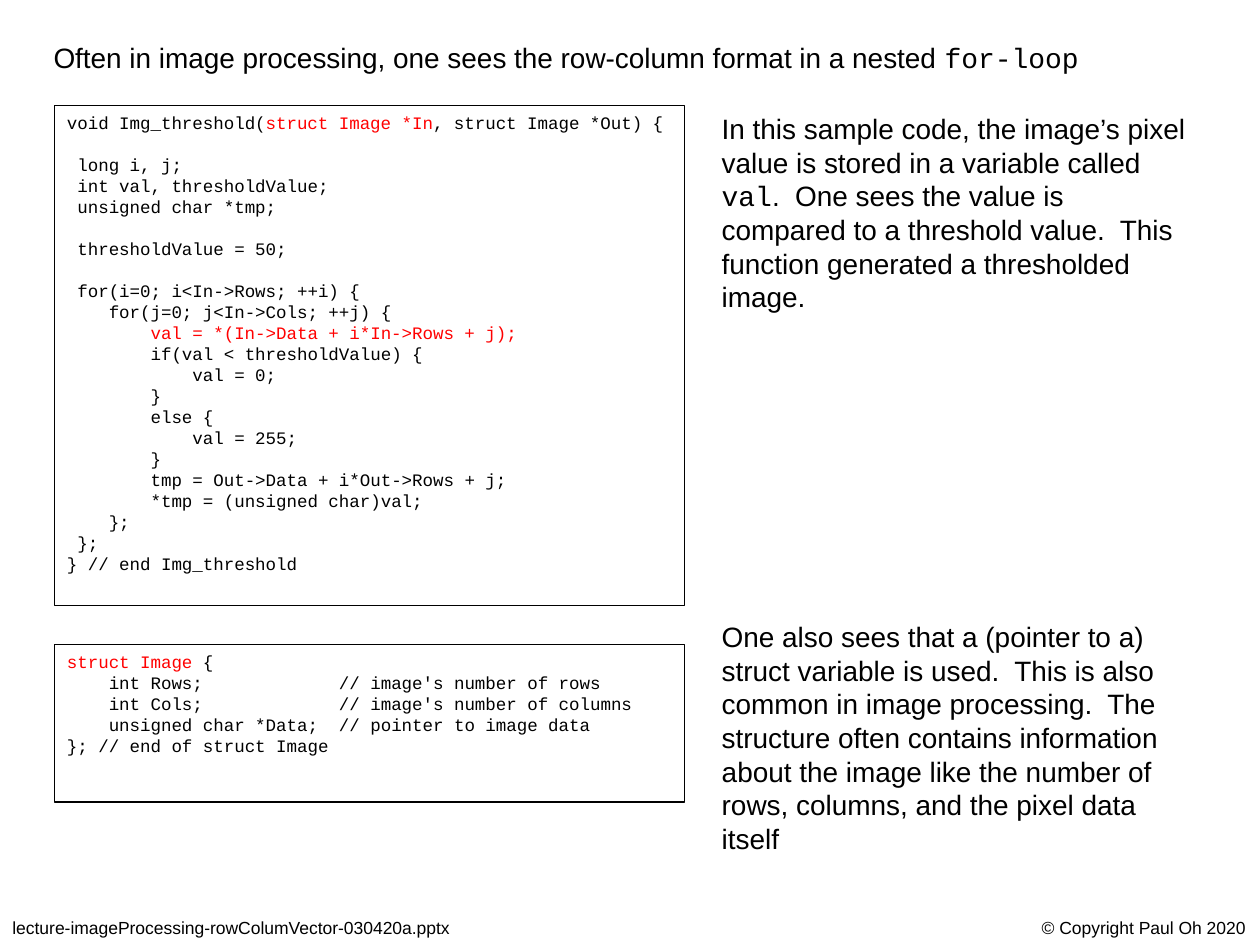
"""Build a slide on row-column image code in a nested for-loop."""
from pptx import Presentation
from pptx.dml.color import RGBColor
from pptx.enum.shapes import MSO_SHAPE
from pptx.enum.text import MSO_ANCHOR, MSO_AUTO_SIZE, PP_ALIGN
from pptx.util import Cm, Pt

HUES = {"ink": "000000", "mark": "FF0000"}
FRAME = {"auto_size": MSO_AUTO_SIZE.SHAPE_TO_FIT_TEXT, "vertical_anchor": MSO_ANCHOR.TOP}
SANS, MONO = "Arial", "Courier New"
LEFT, TOP, WIDE = 1.1, 2.13, 12.7
SIDE, SPAN = 14.3, 10.01
FOOT = 18.36

LOOP = """void Img_threshold(|struct Image *In|, struct Image *Out) {

 long i, j;
 int val, thresholdValue;
 unsigned char *tmp;

 thresholdValue = 50;

 for(i=0; i<In->Rows; ++i) {
    for(j=0; j<In->Cols; ++j) {
        |val = *(In->Data + i*In->Rows + j);|
        if(val < thresholdValue) {
            val = 0;
        }
        else {
            val = 255;
        }
        tmp = Out->Data + i*Out->Rows + j;
        *tmp = (unsigned char)val;
    };
 };
} // end Img_threshold"""

STRUCT = """|struct Image |{
    int Rows;             // image's number of rows
    int Cols;             // image's number of columns
    unsigned char *Data;  // pointer to image data
}; // end of struct Image"""

TITLE = "Often in image processing, one sees the row-column format in a nested |for-loop|"
VALUE = ("In this sample code, the image’s pixel value is stored in a variable called |val|.  "
         "One sees the value is compared to a threshold value.  "
         "This function generated a thresholded image.")
POINTER = ("One also sees that a (pointer to a) struct variable is used.  "
           "This is also common in image processing.  The structure often contains "
           "information about the image like the number of rows, columns, "
           "and the pixel data itself")


def fill_text(shape, text, size, wrap, base, accent):
    """Write lines into a shape; parts between bars take the accent style."""
    frame = shape.text_frame
    for key, value in {**FRAME, "word_wrap": wrap}.items():
        setattr(frame, key, value)
    para, gap = frame.paragraphs[0], 0
    for row, line in enumerate(text.split("\n")):
        if not line:
            gap += 12
            continue
        if row:
            para = frame.add_paragraph()
        para.alignment = PP_ALIGN.LEFT
        if gap:
            para.space_before = Pt(gap)
        gap = 0
        for turn, part in enumerate(line.split("|")):
            if part:
                run = para.add_run()
                run.text = part
                name, hue = accent if turn % 2 else base
                for key, value in {"name": name, "size": Pt(size)}.items():
                    setattr(run.font, key, value)
                run.font.color.rgb = RGBColor.from_string(HUES[hue])


deck = Presentation()
deck.slide_width, deck.slide_height = Cm(25.4), Cm(19.05)
slide = deck.slides.add_slide(deck.slide_layouts[6])

PROSE = [
    (TITLE, 0.83, 0.69, 21.46, 0.94, 16, False),
    (VALUE, SIDE, TOP, SPAN, 4.37, 16, True),
    (POINTER, SIDE, 12.37, SPAN, 5.05, 16, True),
    ("lecture-imageProcessing-rowColumVector-030420a.pptx", 0, FOOT, 9.42, 0.69, 10, False),
    ("© Copyright Paul Oh 2020", 20.75, FOOT, 4.65, 0.69, 10, False),
]
for text, left, top, width, height, size, wrap in PROSE:
    box = slide.shapes.add_textbox(Cm(left), Cm(top), Cm(width), Cm(height))
    fill_text(box, text, size, wrap, (SANS, "ink"), (MONO, "ink"))

for text, top, height, wrap in [(LOOP, TOP, 10.08, False), (STRUCT, 13, 3.17, True)]:
    box = slide.shapes.add_shape(
        MSO_SHAPE.RECTANGLE, Cm(LEFT), Cm(top), Cm(WIDE), Cm(height))
    box.shadow.inherit = False
    box.fill.background()
    box.line.color.rgb = RGBColor.from_string(HUES["ink"])
    box.line.width = Pt(0.75)
    fill_text(box, text, 10, wrap, (MONO, "ink"), (MONO, "mark"))

deck.save("out.pptx")
